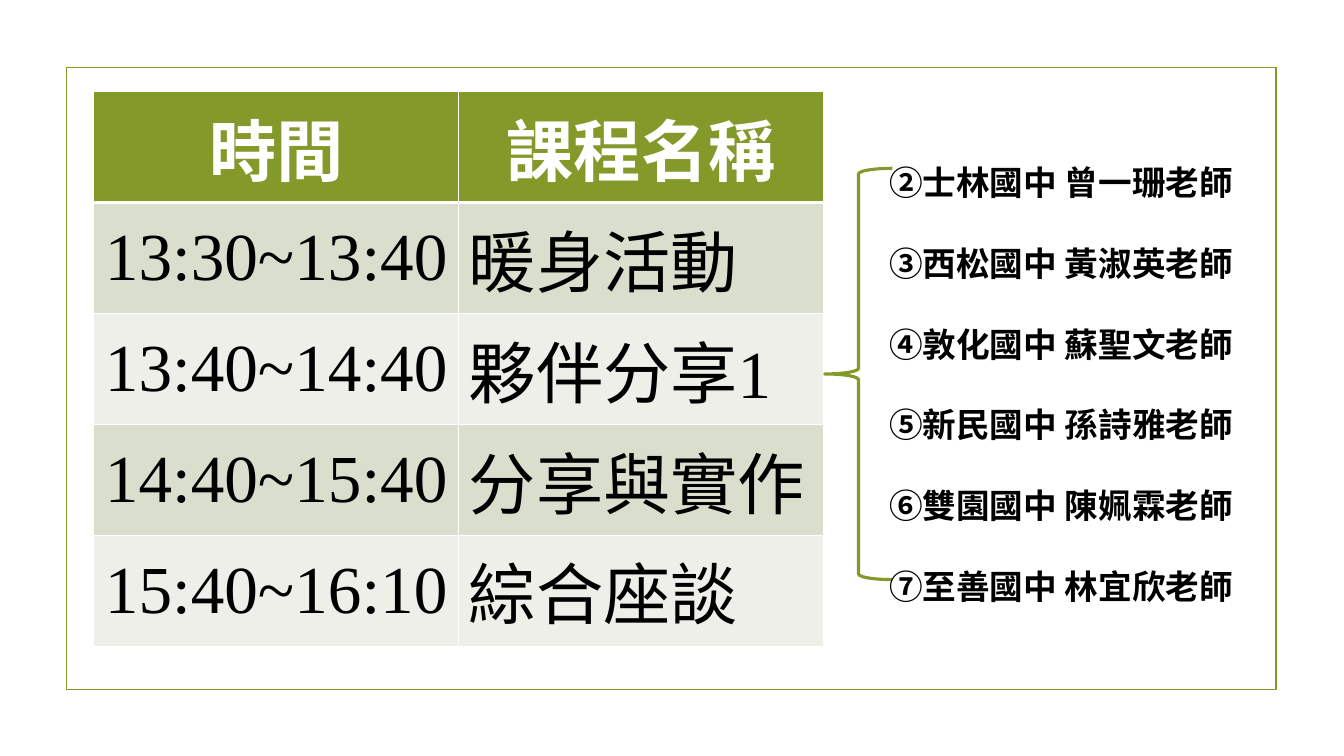
from lxml import etree
from pptx import Presentation
from pptx.dml.color import RGBColor
from pptx.enum.shapes import MSO_SHAPE
from pptx.enum.text import MSO_ANCHOR, MSO_AUTO_SIZE, PP_ALIGN
from pptx.oxml.ns import qn
from pptx.util import Inches, Pt

RECTANGLE, LEFT_BRACE = MSO_SHAPE.RECTANGLE, MSO_SHAPE.LEFT_BRACE
MIDDLE, FIT_SHAPE = MSO_ANCHOR.MIDDLE, MSO_AUTO_SIZE.SHAPE_TO_FIT_TEXT
LEFT, CENTER = PP_ALIGN.LEFT, PP_ALIGN.CENTER

# Content
SCHEDULE = [
    ("時間", "課程名稱"),
    ("13:30~13:40", "暖身活動"),
    ("13:40~14:40", "夥伴分享1"),
    ("14:40~15:40", "分享與實作"),
    ("15:40~16:10", "綜合座談"),
]
SPEAKERS = [
    "②士林國中 曾一珊老師",
    "③西松國中 黃淑英老師",
    "④敦化國中 蘇聖文老師",
    "⑤新民國中 孫詩雅老師",
    "⑥雙園國中 陳姵霖老師",
    "⑦至善國中 林宜欣老師",
]

THEME = {
    "font": "Times New Roman",
    "accent": "83992A",
    "bands": ("D9DECD", "EDEFE8"),
    "light": "FFFFFF",
    "dark": "000000",
    "table_size": 48,
    "speaker_size": 24,
}

# Layout: left, top, width, height in inches
FRAME = (0.66, 0.67, 12, 6.17)
TABLE = (0.93, 0.91, 7.24, 5.5)
BRACE = (8.18, 1.67, 0.67, 4.08)
SPEAKER_BOX = (8.72, 1.16, 3.62, 4.95)


def place(box):
    return [Inches(length) for length in box]


def style_text(paragraph, size, color, bold):
    font = paragraph.font
    font.name = THEME["font"]
    font.size = Pt(size)
    font.bold = bold
    font.color.rgb = RGBColor.from_string(color)


def add_outline(slide, kind, box, width):
    shape = slide.shapes.add_shape(kind, *place(box))
    shape.shadow.inherit = False
    shape.fill.background()
    shape.line.color.rgb = RGBColor.from_string(THEME["accent"])
    shape.line.width = Pt(width)


def set_border(cell, side, width):
    properties = cell._tc.get_or_add_tcPr()
    line = etree.SubElement(properties, qn(f"a:ln{side}"), w=str(Pt(width)))
    fill = etree.SubElement(line, qn("a:solidFill"))
    etree.SubElement(fill, qn("a:srgbClr"), val=THEME["light"])


def add_schedule(slide):
    table = slide.shapes.add_table(
        len(SCHEDULE), len(SCHEDULE[0]), *place(TABLE)).table
    for row, texts in enumerate(SCHEDULE):
        header = row == 0
        fill = THEME["accent"] if header else THEME["bands"][(row - 1) % 2]
        for column, text in enumerate(texts):
            cell = table.cell(row, column)
            for side in "LRTB":
                thick = (header and side == "B") or (row == 1 and side == "T")
                set_border(cell, side, 3 if thick else 1)
            cell.fill.solid()
            cell.fill.fore_color.rgb = RGBColor.from_string(fill)
            cell.vertical_anchor = MIDDLE
            cell.text = text
            paragraph = cell.text_frame.paragraphs[0]
            paragraph.alignment = CENTER if header or column == 0 else LEFT
            style_text(paragraph, THEME["table_size"],
                       THEME["light" if header else "dark"], header)


def add_speakers(slide):
    frame = slide.shapes.add_textbox(*place(SPEAKER_BOX)).text_frame
    frame.word_wrap = False
    frame.auto_size = FIT_SHAPE
    frame.text = "\n".join(SPEAKERS)
    for paragraph in frame.paragraphs:
        paragraph.line_spacing = 2.0
        style_text(paragraph, THEME["speaker_size"], THEME["dark"], True)


def main():
    presentation = Presentation()
    presentation.slide_width = Inches(13.33)
    presentation.slide_height = Inches(7.5)
    slide = presentation.slides.add_slide(presentation.slide_layouts[6])

    # Frame, timetable, then the speakers of the sharing session
    add_outline(slide, RECTANGLE, FRAME, 1.25)
    add_schedule(slide)
    add_outline(slide, LEFT_BRACE, BRACE, 2.25)
    add_speakers(slide)
    presentation.save("out.pptx")


if __name__ == "__main__":
    main()
